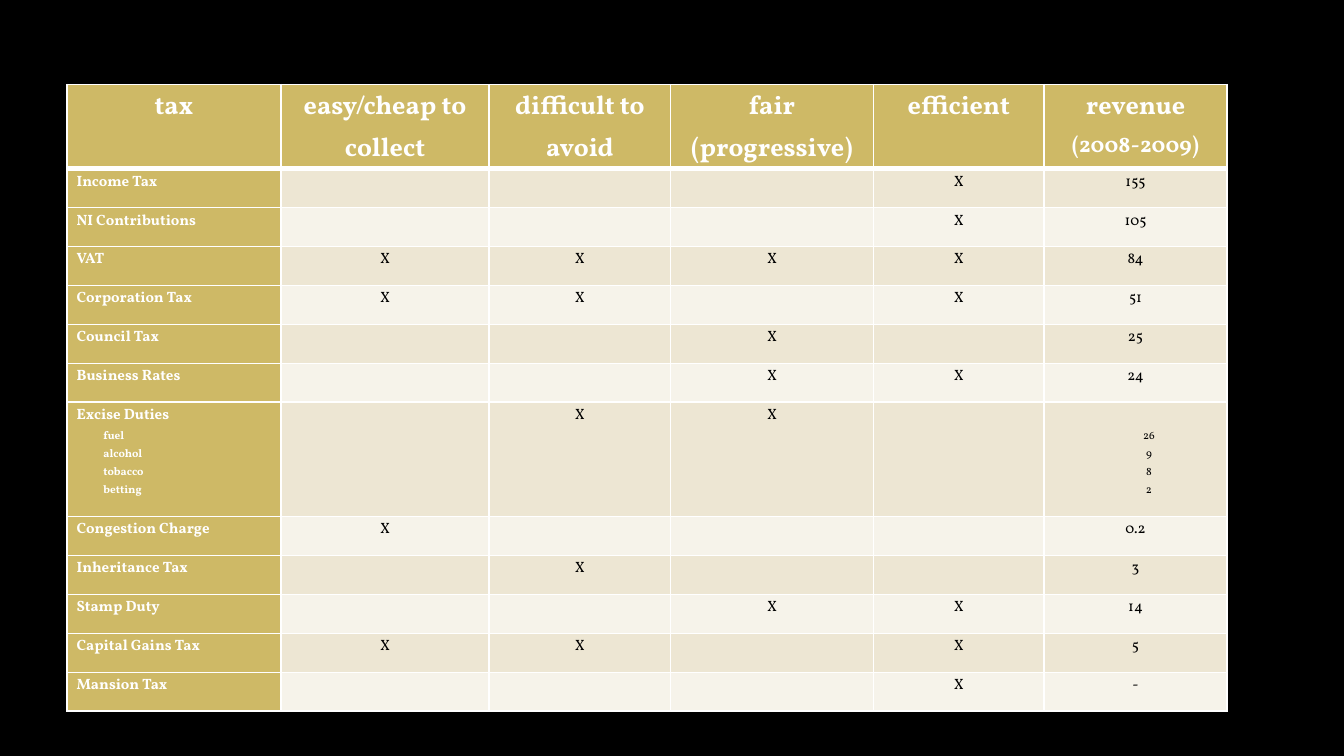
from lxml import etree
from pptx import Presentation
from pptx import util as u
from pptx.dml.color import RGBColor
from pptx.enum import text
from pptx.oxml import ns

GOLD, SAND, CREAM = "CEB966", "EDE6D3", "F6F3EA"
WHITE, BLACK = "FFFFFF", "000000"
LEFT, CENTER = text.PP_ALIGN.LEFT, text.PP_ALIGN.CENTER


def rgb(value):
    return RGBColor.from_string(value)


def write(paragraph, words, size=8, color=BLACK, bold=False, align=CENTER, indent=0):
    paragraph.alignment = align
    paragraph.line_spacing = 1.15
    if indent:
        paragraph._p.get_or_add_pPr().set("marL", str(u.Inches(indent)))
    # The paragraph font also keeps empty cells from stretching their row
    target = paragraph
    if words:
        target = paragraph.add_run()
        target.text = words
    font = target.font
    font.name, font.size, font.bold = "Vollkorn", u.Pt(size), bold
    font.color.rgb = rgb(color)


headings = ["tax", "easy/cheap to collect", "difficult to avoid",
            "fair (progressive)", "efficient", "revenue"]
column_widths = [1.59, 1.55, 1.35, 1.51, 1.27, 1.36]

# Tax, numbers of the columns marked X, revenue
taxes = [
    ("Income Tax", [4], "155"),
    ("NI Contributions", [4], "105"),
    ("VAT", [1, 2, 3, 4], "84"),
    ("Corporation Tax", [1, 2, 4], "51"),
    ("Council Tax", [3], "25"),
    ("Business Rates", [3, 4], "24"),
    ("Excise Duties", [2, 3], ""),
    ("Congestion Charge", [1], "0.2"),
    ("Inheritance Tax", [2], "3"),
    ("Stamp Duty", [3, 4], "14"),
    ("Capital Gains Tax", [1, 2, 4], "5"),
    ("Mansion Tax", [4], "-"),
]
duties = [("fuel", "26"), ("alcohol", "9"), ("tobacco", "8"), ("betting", "2")]

# Slide in 16:9
deck = Presentation()
deck.slide_width = u.Inches(10)
deck.slide_height = deck.slide_width * 9 // 16
slide = deck.slides.add_slide(deck.slide_layouts[6])
slide.background.fill.solid()
slide.background.fill.fore_color.rgb = rgb(BLACK)

# Table grid
tax_table = slide.shapes.add_table(
    len(taxes) + 1, len(headings),
    u.Inches(0.5), u.Inches(0.63), u.Inches(8.62), u.Inches(4.63)).table
for column, width in zip(tax_table.columns, column_widths):
    column.width = u.Inches(width)
tax_table.rows[0].height = u.Inches(0.6)
for number, (tax, marks, revenue) in enumerate(taxes, start=1):
    tax_table.rows[number].height = u.Inches(0.85 if tax == "Excise Duties" else 0.29)

# Cell fills, margins and borders
for r in range(len(taxes) + 1):
    for c in range(len(headings)):
        cell = tax_table.cell(r, c)
        cell.margin_left = cell.margin_right = u.Inches(0.07)
        cell.margin_top = cell.margin_bottom = 0
        properties = cell._tc.get_or_add_tcPr()
        for side in ("lnL", "lnR", "lnT", "lnB"):
            under_header = (r, side) in ((0, "lnB"), (1, "lnT"))
            line = etree.SubElement(properties, ns.qn("a:" + side),
                                    w=str(u.Pt(3 if under_header else 1)))
            paint = etree.SubElement(line, ns.qn("a:solidFill"))
            etree.SubElement(paint, ns.qn("a:srgbClr"), val=WHITE)
        cell.fill.solid()
        band = SAND if r % 2 else CREAM
        cell.fill.fore_color.rgb = rgb(GOLD if r == 0 or c == 0 else band)

# Header row
for c, heading in enumerate(headings):
    write(tax_table.cell(0, c).text_frame.paragraphs[0], heading,
          size=14, color=WHITE, bold=True)
write(tax_table.cell(0, 5).text_frame.add_paragraph(), "(2008-2009)",
      size=12, color=WHITE, bold=True)

# Tax rows
for r, (tax, marks, revenue) in enumerate(taxes, start=1):
    names, *criteria, amounts = [tax_table.cell(r, c) for c in range(len(headings))]
    write(names.text_frame.paragraphs[0], tax, color=WHITE, bold=True, align=LEFT)
    for c, criterion in enumerate(criteria, start=1):
        write(criterion.text_frame.paragraphs[0], "X" if c in marks else "")
    if tax != "Excise Duties":
        write(amounts.text_frame.paragraphs[0], revenue)
        continue
    # Duties are listed below the name, with their amounts level with them
    amounts.margin_top = u.Inches(0.18)
    for i, (duty, amount) in enumerate(duties):
        write(names.text_frame.add_paragraph(), duty, size=6, color=WHITE,
              bold=True, align=LEFT, indent=0.2)
        frame = amounts.text_frame
        write(frame.add_paragraph() if i else frame.paragraphs[0], amount,
              size=6, indent=0.2)

deck.save("out.pptx")
